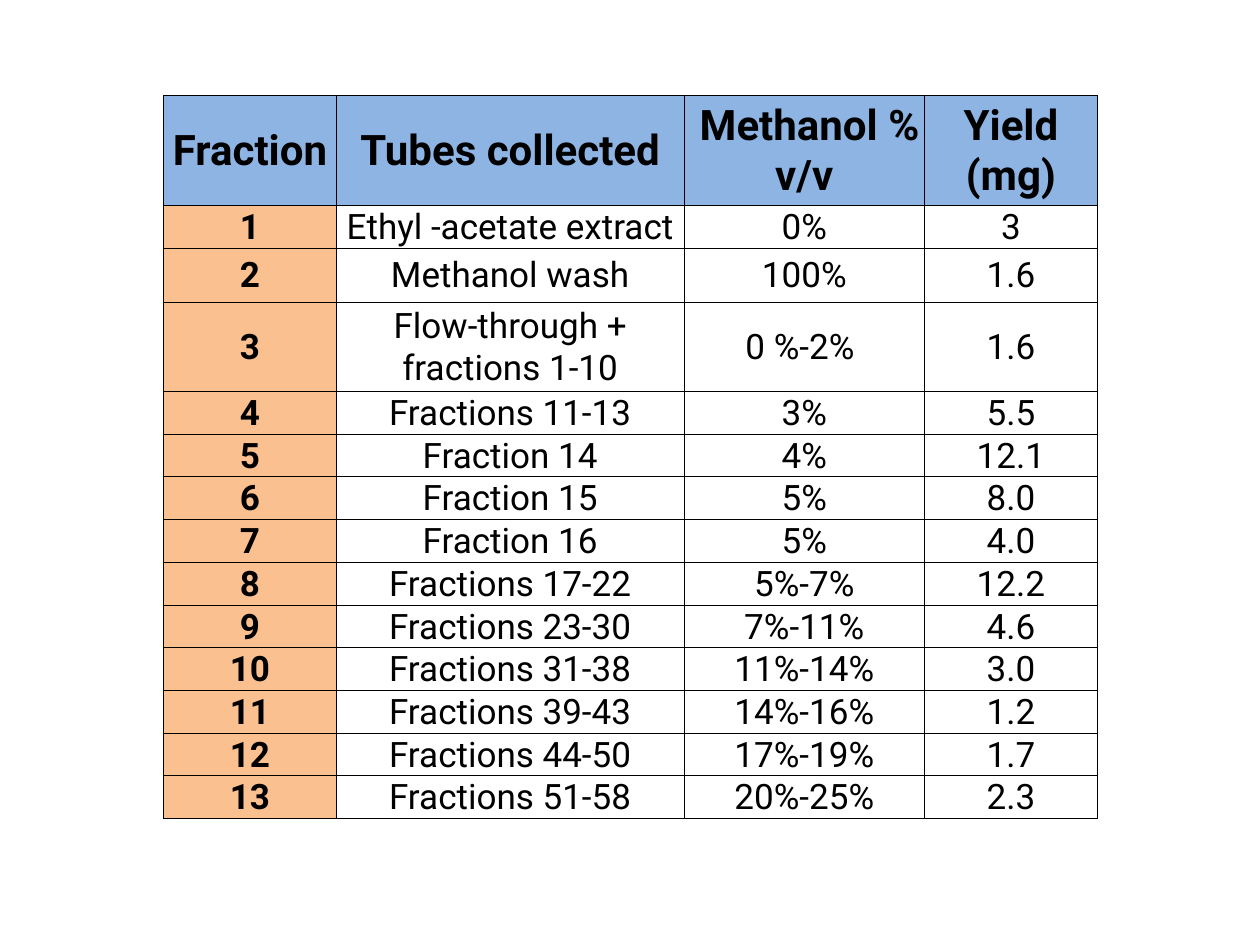
from lxml.etree import SubElement
from pptx import Presentation
from pptx.dml.color import RGBColor
from pptx.enum.text import MSO_ANCHOR, PP_ALIGN
from pptx.oxml.ns import qn
from pptx.util import Cm, Pt

HEADINGS = ("Fraction", "Tubes collected", " Methanol % v/v", "Yield (mg)")
FRACTIONS = [
    ("Ethyl -acetate extract", "0%", "3"),
    ("Methanol wash", "100%", "1.6"),
    ("Flow-through + fractions 1-10", "0 %-2% ", "1.6"),
    ("Fractions 11-13", "3%", "5.5"),
    ("Fraction 14", "4%", "12.1"),
    ("Fraction 15", "5%", "8.0"),
    ("Fraction 16", "5%", "4.0"),
    ("Fractions 17-22", "5%-7%", "12.2"),
    ("Fractions 23-30", "7%-11%", "4.6"),
    ("Fractions 31-38", "11%-14%", "3.0"),
    ("Fractions 39-43", "14%-16%", "1.2"),
    ("Fractions 44-50", "17%-19%", "1.7"),
    ("Fractions 51-58", "20%-25%", "2.3"),
]
COLUMN_WIDTHS = (3.48, 7.01, 4.85, 3.48)
ROW_HEIGHT = 0.85
TALL_ROWS = {0: 2.21, 2: 1.09, 3: 1.8}
BLACK, BLUE, ORANGE = "000000", "8DB4E3", "FAC090"


def color(value):
    return RGBColor.from_string(value)


def outline_cell(cell):
    properties = cell._tc.get_or_add_tcPr()
    for side in ("a:lnL", "a:lnR", "a:lnT", "a:lnB"):
        border = SubElement(properties, qn(side), w=str(Pt(0.5)))
        SubElement(SubElement(border, qn("a:solidFill")), qn("a:srgbClr"), val=BLACK)


def fill_cell(cell, wording, size, bold, background):
    cell.text = wording
    cell.vertical_anchor = MSO_ANCHOR.MIDDLE
    cell.margin_left = cell.margin_right = cell.margin_top = Cm(0.03)
    cell.margin_bottom = 0
    paragraph = cell.text_frame.paragraphs[0]
    paragraph.alignment = PP_ALIGN.CENTER
    paragraph.font.name = "Roboto"
    paragraph.font.size = Pt(size)
    paragraph.font.bold = bold
    paragraph.font.color.rgb = color(BLACK)
    outline_cell(cell)
    if background:
        cell.fill.solid()
        cell.fill.fore_color.rgb = color(background)
    else:
        cell.fill.background()


def add_yield_table(slide, left, top):
    rows = [HEADINGS] + [(str(n), *entry) for n, entry in enumerate(FRACTIONS, 1)]
    heights = [TALL_ROWS.get(i, ROW_HEIGHT) for i in range(len(rows))]
    table = slide.shapes.add_table(
        len(rows), len(HEADINGS), Cm(left), Cm(top),
        Cm(sum(COLUMN_WIDTHS)), Cm(sum(heights)),
    ).table
    table.horz_banding = False
    for column, width in zip(table.columns, COLUMN_WIDTHS):
        column.width = Cm(width)
    for i, (entries, height) in enumerate(zip(rows, heights)):
        table.rows[i].height = Cm(height)
        for j, wording in enumerate(entries):
            if i == 0:
                fill_cell(table.cell(i, j), wording, 24, True, BLUE)
            else:
                fill_cell(table.cell(i, j), wording, 20, j == 0, ORANGE if j == 0 else None)


def main():
    presentation = Presentation()
    presentation.slide_width, presentation.slide_height = Cm(25.4), Cm(19.05)
    slide = presentation.slides.add_slide(presentation.slide_layouts[6])
    add_yield_table(slide, 3.3, 1.93)
    presentation.save("out.pptx")


if __name__ == "__main__":
    main()
